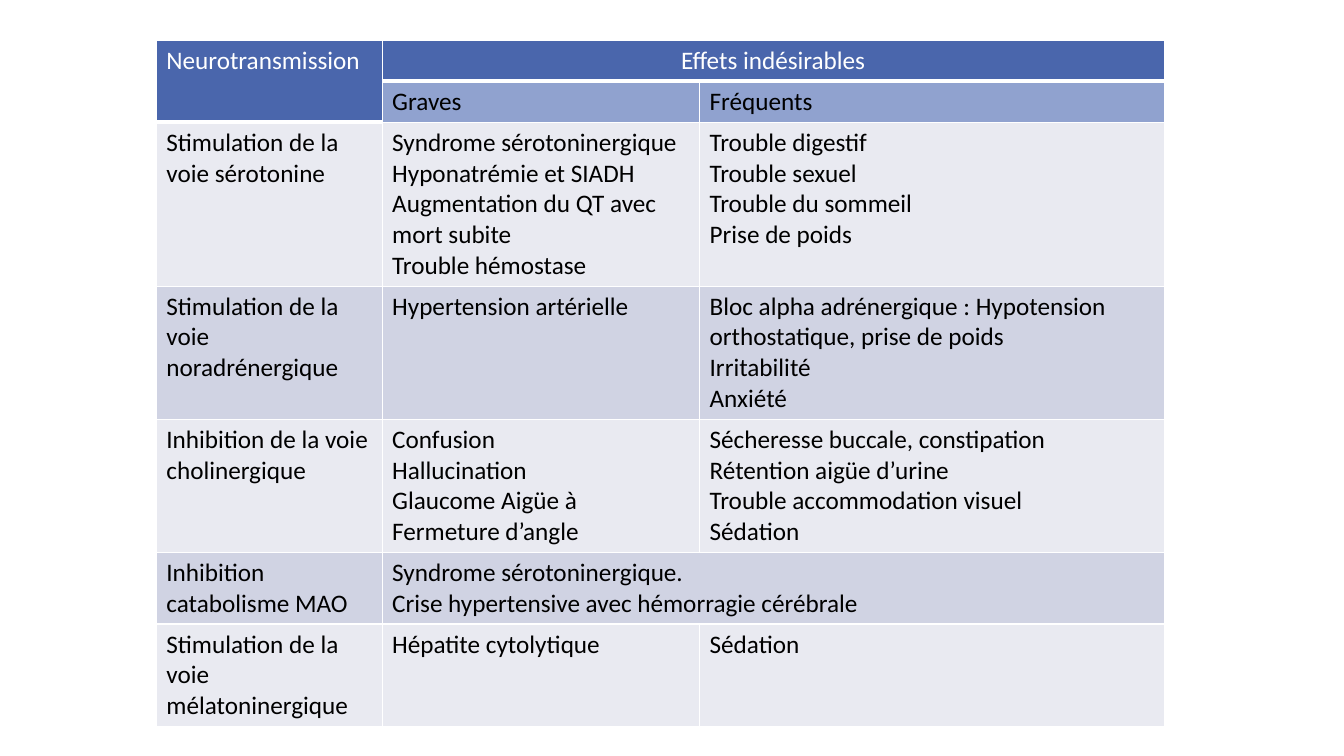
from dataclasses import dataclass

from lxml.etree import SubElement
from pptx import Presentation
from pptx.dml.color import RGBColor
from pptx.enum.text import PP_ALIGN
from pptx.oxml.ns import qn
from pptx.table import Table, _Cell
from pptx.util import Cm, Pt

WHITE, BLACK = "FFFFFF", "000000"
HEADER, SUBHEADER = "4A66AC", "90A2CF"
BANDS = ("E9EAF1", "D0D3E3")
COLUMN_WIDTHS = (5.69, 8.0, 11.71)
LINE_HEIGHT, CELL_PADDING = 0.775, 0.25


@dataclass
class EffectRow:
    neurotransmission: str
    serious: str
    frequent: str
    lines: int


EFFECTS = [
    EffectRow("Stimulation de la voie sérotonine",
              "Syndrome sérotoninergique\nHyponatrémie et SIADH\n"
              "Augmentation du QT avec mort subite\nTrouble hémostase",
              "Trouble digestif\nTrouble sexuel\nTrouble du sommeil\nPrise de poids", 5),
    EffectRow("Stimulation de la voie noradrénergique",
              "Hypertension artérielle",
              "Bloc alpha adrénergique : Hypotension orthostatique, prise de poids\n"
              "Irritabilité\nAnxiété", 4),
    EffectRow("Inhibition de la voie cholinergique",
              "Confusion\nHallucination\nGlaucome Aigüe à Fermeture d’angle",
              "Sécheresse buccale, constipation\nRétention aigüe d’urine\n"
              "Trouble accommodation visuel\nSédation", 4),
    EffectRow("Inhibition catabolisme MAO",
              "Syndrome sérotoninergique.\nCrise hypertensive avec hémorragie cérébrale",
              "", 2),
    EffectRow("Stimulation de la voie mélatoninergique",
              "Hépatite cytolytique", "Sédation", 3),
]
HEADINGS = [
    EffectRow("Neurotransmission", "Effets indésirables", "", 1),
    EffectRow("", "Graves", "Fréquents", 1),
]


def rgb(color: str) -> RGBColor:
    return RGBColor.from_string(color)


def add_borders(cell: _Cell, bottom_width: float) -> None:
    properties = cell._tc.get_or_add_tcPr()
    for side, width in (("L", 1), ("R", 1), ("T", 1), ("B", bottom_width)):
        border = SubElement(properties, qn(f"a:ln{side}"), w=str(Pt(width)))
        fill = SubElement(border, qn("a:solidFill"))
        SubElement(fill, qn("a:srgbClr"), val=WHITE)


def fill_cell(cell: _Cell, text: str, fill: str, color: str, bottom_width: float) -> None:
    add_borders(cell, bottom_width)
    cell.fill.solid()
    cell.fill.fore_color.rgb = rgb(fill)
    cell.text_frame.text = text
    for paragraph in cell.text_frame.paragraphs:
        paragraph.font.size = Pt(18)
        for run in paragraph.runs:
            run.font.name = "Calibri"
            run.font.size = Pt(18)
            run.font.color.rgb = rgb(color)


def fill_row(table: Table, index: int, row: EffectRow) -> None:
    table.rows[index].height = Cm(row.lines * LINE_HEIGHT + CELL_PADDING)
    texts = (row.neurotransmission, row.serious, row.frequent)
    for column, text in enumerate(texts):
        is_header = index == 0 or (index == 1 and column == 0)
        if is_header:
            fill = HEADER
        elif index == 1:
            fill = SUBHEADER
        else:
            fill = BANDS[index % 2]
        fill_cell(table.cell(index, column), text, fill,
                  WHITE if is_header else BLACK, 3 if index == 0 else 1)
    if not row.frequent:
        table.cell(index, 1).merge(table.cell(index, 2))


def main() -> None:
    presentation = Presentation()
    presentation.slide_width, presentation.slide_height = Cm(33.87), Cm(19.05)
    slide = presentation.slides.add_slide(presentation.slide_layouts[6])

    rows = HEADINGS + EFFECTS
    table = slide.shapes.add_table(len(rows), len(COLUMN_WIDTHS), Cm(3.94), Cm(1.02),
                                   Cm(sum(COLUMN_WIDTHS)), Cm(17)).table
    table.first_row = table.horz_banding = False
    for column, width in zip(table.columns, COLUMN_WIDTHS):
        column.width = Cm(width)
    for index, row in enumerate(rows):
        fill_row(table, index, row)
    table.cell(0, 0).merge(table.cell(1, 0))
    table.cell(0, 1).text_frame.paragraphs[0].alignment = PP_ALIGN.CENTER

    presentation.save("out.pptx")


if __name__ == "__main__":
    main()
